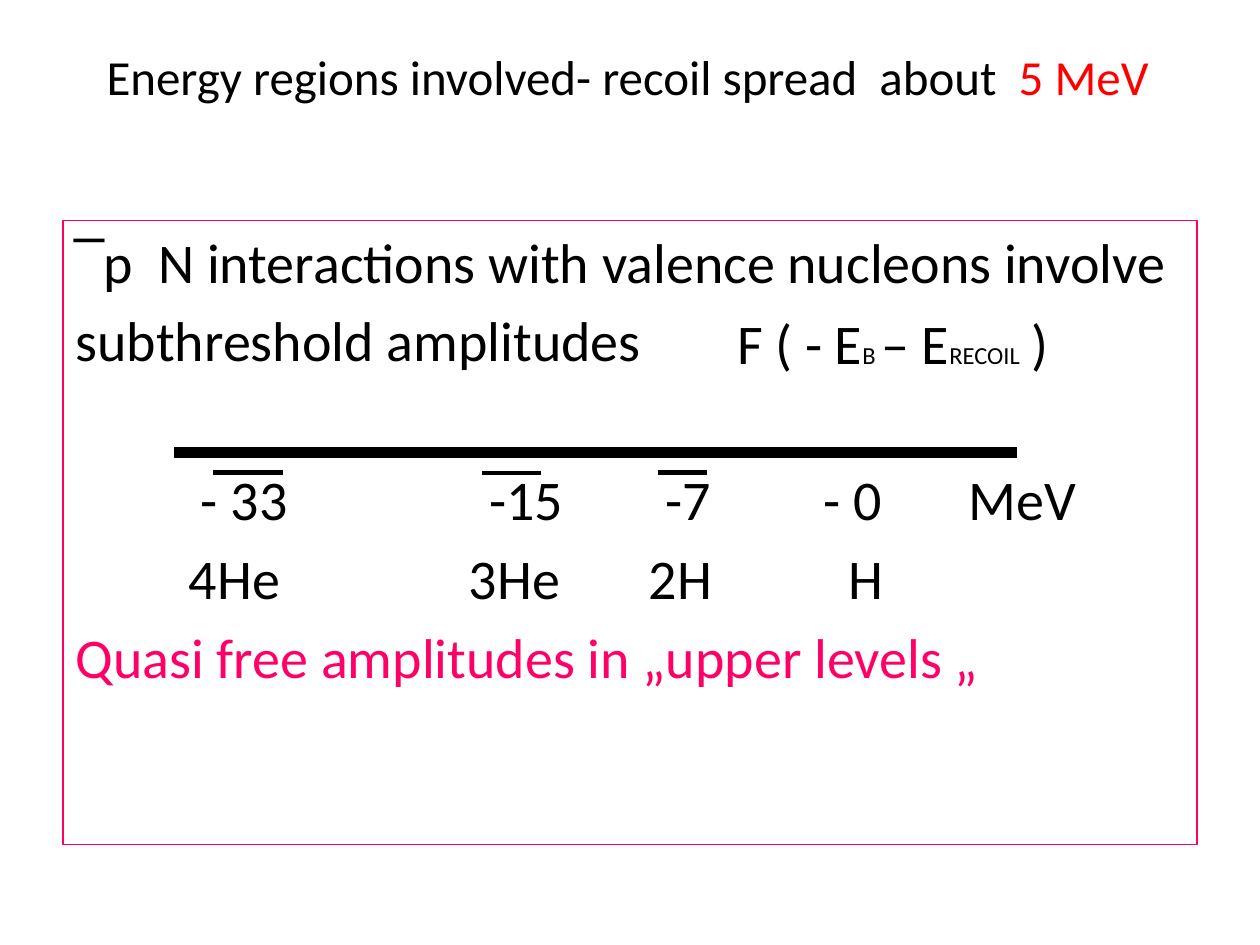
from lxml.etree import SubElement
from pptx import Presentation
from pptx.dml.color import RGBColor
from pptx.enum.shapes import MSO_CONNECTOR
from pptx.enum.text import MSO_ANCHOR, MSO_AUTO_SIZE, PP_ALIGN
from pptx.oxml.ns import qn
from pptx.util import Cm, Pt

BLACK = RGBColor(0x00, 0x00, 0x00)
RED = RGBColor(0xFF, 0x00, 0x00)
PINK = RGBColor(0xFF, 0x00, 0x66)

ENERGIES = ((0.54, "- 33"), (6.35, "-15"), (9.9, "-7"), (13.1, "- 0"), (16.02, "MeV"))
NUCLEI = ((0.3, "4He"), (5.94, "3He"), (9.57, "2H"), (13.59, "H"))
SPREADS = ((0.79, 1.4, 3), (6.2, 1.19, 2.25), (9.75, 1, 3))


def add_text(paragraph, text, size=32, color=BLACK):
    run = paragraph.add_run()
    run.text = text
    run.font.name = "Calibri"
    run.font.size = Pt(size)
    run.font.color.rgb = color


def place(placeholder, box, anchor):
    placeholder.left, placeholder.top, placeholder.width, placeholder.height = map(Cm, box)
    frame = placeholder.text_frame
    frame.word_wrap = True
    frame.auto_size = MSO_AUTO_SIZE.NONE
    frame.vertical_anchor = anchor
    return frame


def remove_bullet(paragraph):
    properties = paragraph._p.get_or_add_pPr()
    properties.set("marL", "0")
    properties.set("indent", "0")
    SubElement(properties, qn("a:buNone"))


def add_label(slide, left, top, width, parts):
    frame = slide.shapes.add_textbox(Cm(left), Cm(top), Cm(width), Cm(1.38)).text_frame
    frame.margin_left = frame.margin_right = frame.margin_top = frame.margin_bottom = 0
    frame.word_wrap = True
    for text, size in parts:
        add_text(frame.paragraphs[0], text, size=size)


def fill_title(slide, box):
    heading = place(slide.shapes.title, box, MSO_ANCHOR.MIDDLE).paragraphs[0]
    heading.alignment = PP_ALIGN.CENTER
    add_text(heading, "Energy regions involved- recoil spread  about  ", size=28)
    add_text(heading, "5 MeV", size=28, color=RED)
    add_text(heading, " ", size=20)


def fill_body(slide, box):
    body = slide.placeholders[1]
    frame = place(body, box, MSO_ANCHOR.TOP)
    body.line.color.rgb = PINK
    body.line.width = Pt(0.75)

    lines = (
        ("‾p  N interactions with valence nucleons involve", 6.4, BLACK),
        ("subthreshold amplitudes", 6.4, BLACK),
        ("Quasi free amplitudes in „upper levels „", 142.5, PINK),
    )
    for index, (text, space_before, color) in enumerate(lines):
        paragraph = frame.add_paragraph() if index else frame.paragraphs[0]
        paragraph.space_before = Pt(space_before)
        remove_bullet(paragraph)
        add_text(paragraph, text, color=color)

    left, top = box[:2]
    amplitude = (("F ( - E", 32), ("B ", 14), ("– E", 32), ("RECOIL  ", 14), (")", 32))
    add_label(slide, left + 13.59, top + 1.76, 7.5, amplitude)


def add_level(slide, start, end, height, weight):
    level = slide.shapes.add_connector(
        MSO_CONNECTOR.STRAIGHT, Cm(start), Cm(height), Cm(end), Cm(height))
    level.line.color.rgb = BLACK
    level.line.width = Pt(weight)
    SubElement(level._element.spPr, qn("a:effectLst"))


def draw_energy_scale(slide, box):
    left, top, width, row_height = box
    add_level(slide, left, left + width, top, 6)
    for offset, spread, weight in SPREADS:
        start = left + offset
        add_level(slide, start, start + spread, top + 0.41, weight)
    for row, labels in enumerate((ENERGIES, NUCLEI)):
        for offset, text in labels:
            add_label(slide, left + offset, top + 0.25 + row * row_height, 2.6, [(text, 32)])


def main():
    deck = Presentation()
    deck.slide_width, deck.slide_height = Cm(25.4), Cm(19.05)
    slide = deck.slides.add_slide(deck.slide_layouts[1])
    fill_title(slide, (1.3, -0.05, 22.86, 3.18))
    fill_body(slide, (1.27, 4.45, 22.86, 12.57))
    draw_energy_scale(slide, (3.51, 9.12, 16.99, 1.58))
    deck.save("out.pptx")


if __name__ == "__main__":
    main()
